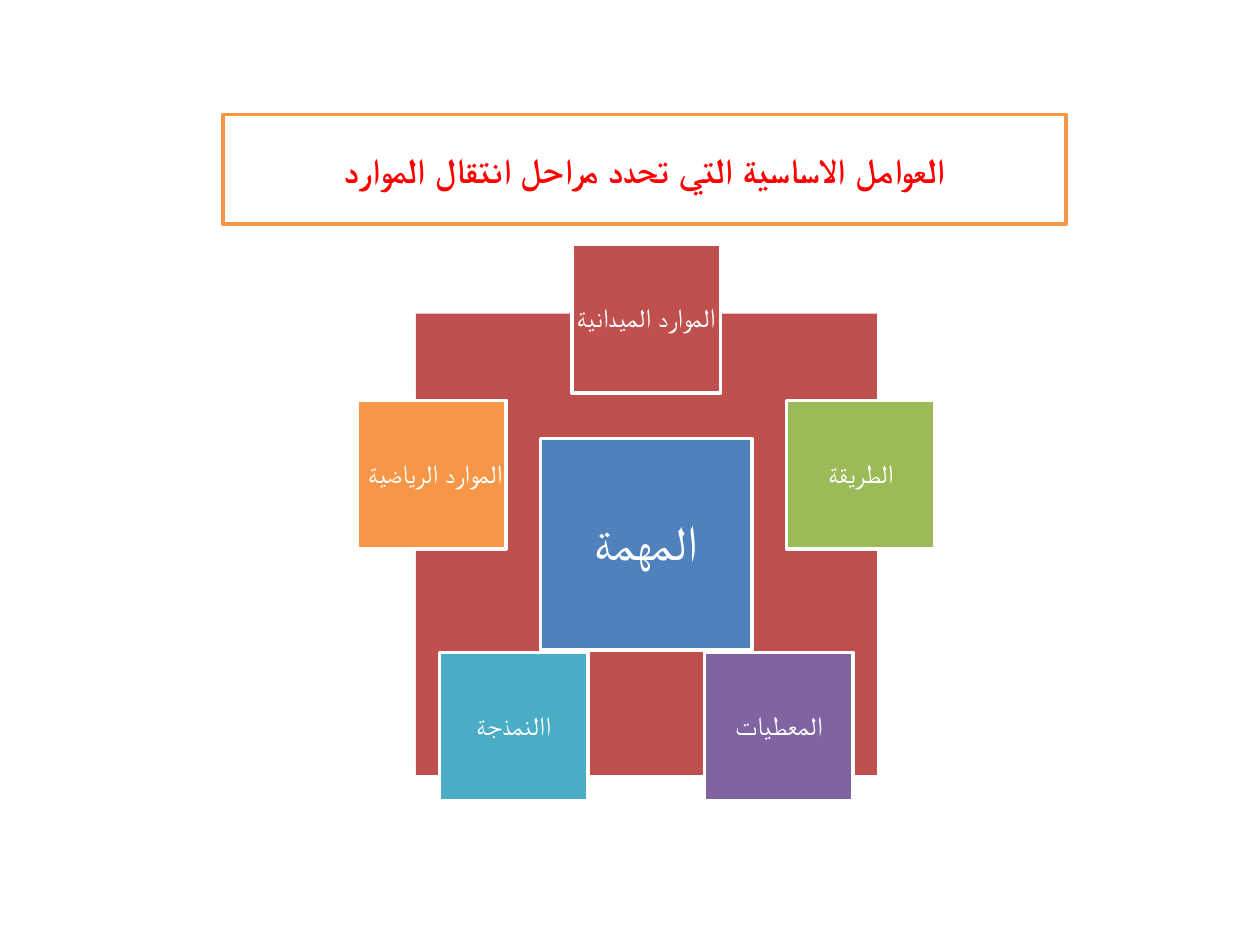
from math import cos, radians, sin

from lxml.etree import SubElement
from pptx import Presentation
from pptx.dml.color import RGBColor
from pptx.enum.shapes import MSO_SHAPE
from pptx.enum.text import MSO_ANCHOR, PP_ALIGN
from pptx.oxml.ns import qn
from pptx.util import Inches, Pt

FONT = "Quicksand"
WHITE = "FFFFFF"
TITLE = "العوامل الاساسية التي تحدد مراحل انتقال الموارد"
TASK = "المهمة"
FACTORS = [
    ("الموارد الميدانية", "C0504D"),
    ("الطريقة", "9BBB59"),
    ("المعطيات", "8064A2"),
    ("االنمذجة", "4BACC6"),
    (" الموارد الرياضية", "F79646"),
]

CENTER_X, CENTER_Y = 5.13, 4.32
RADIUS = 1.79
BACKDROP_SIZE, TASK_SIZE, FACTOR_SIZE = 3.66, 1.68, 1.18


def color(value):
    return RGBColor.from_string(value)


def add_box(slide, left, top, width, height, fill, line=None):
    shape = slide.shapes.add_shape(
        MSO_SHAPE.RECTANGLE, Inches(left), Inches(top), Inches(width), Inches(height)
    )
    shape.shadow.inherit = False
    shape.fill.solid()
    shape.fill.fore_color.rgb = color(fill)
    if line:
        shape.line.color.rgb = color(line)
        shape.line.width = Pt(2)
    else:
        shape.line.fill.background()
    return shape


def add_square(slide, center_x, center_y, size, fill, line=None):
    return add_box(slide, center_x - size / 2, center_y - size / 2, size, size, fill, line)


def write(shape, text, size, text_color, margins, bold=False, spacing=None):
    horizontal, vertical = (Inches(margin) for margin in margins)
    frame_format = {
        "word_wrap": True,
        "vertical_anchor": MSO_ANCHOR.MIDDLE,
        "margin_left": horizontal,
        "margin_right": horizontal,
        "margin_top": vertical,
        "margin_bottom": vertical,
    }
    for name, value in frame_format.items():
        setattr(shape.text_frame, name, value)
    paragraph = shape.text_frame.paragraphs[0]
    paragraph.alignment = PP_ALIGN.CENTER
    paragraph.line_spacing = spacing
    run = paragraph.add_run()
    run.text = text
    for name, value in {"name": FONT, "size": Pt(size), "bold": bold}.items():
        setattr(run.font, name, value)
    run.font.color.rgb = color(text_color)
    SubElement(run._r.get_or_add_rPr(), qn("a:cs"), typeface=FONT)


def main():
    presentation = Presentation()
    presentation.slide_width = Inches(10)
    presentation.slide_height = Inches(7.5)
    slide = presentation.slides.add_slide(presentation.slide_layouts[6])

    add_square(slide, CENTER_X, CENTER_Y, BACKDROP_SIZE, "C0504D")
    task = add_square(slide, CENTER_X, CENTER_Y, TASK_SIZE, "4F81BD", WHITE)
    write(task, TASK, 28, WHITE, (0.04, 0.04), spacing=0.9)

    for index, (text, fill) in enumerate(FACTORS):
        angle = radians(index * 360 / len(FACTORS))
        factor = add_square(
            slide,
            CENTER_X + RADIUS * sin(angle),
            CENTER_Y - RADIUS * cos(angle),
            FACTOR_SIZE,
            fill,
            WHITE,
        )
        write(factor, text, 15, WHITE, (0.02, 0.02), spacing=0.9)

    title = add_box(slide, 1.77, 0.91, 6.69, 0.87, WHITE, "F79646")
    write(title, TITLE, 20, "FF0000", (0.1, 0.05), bold=True)

    presentation.save("out.pptx")


if __name__ == "__main__":
    main()
